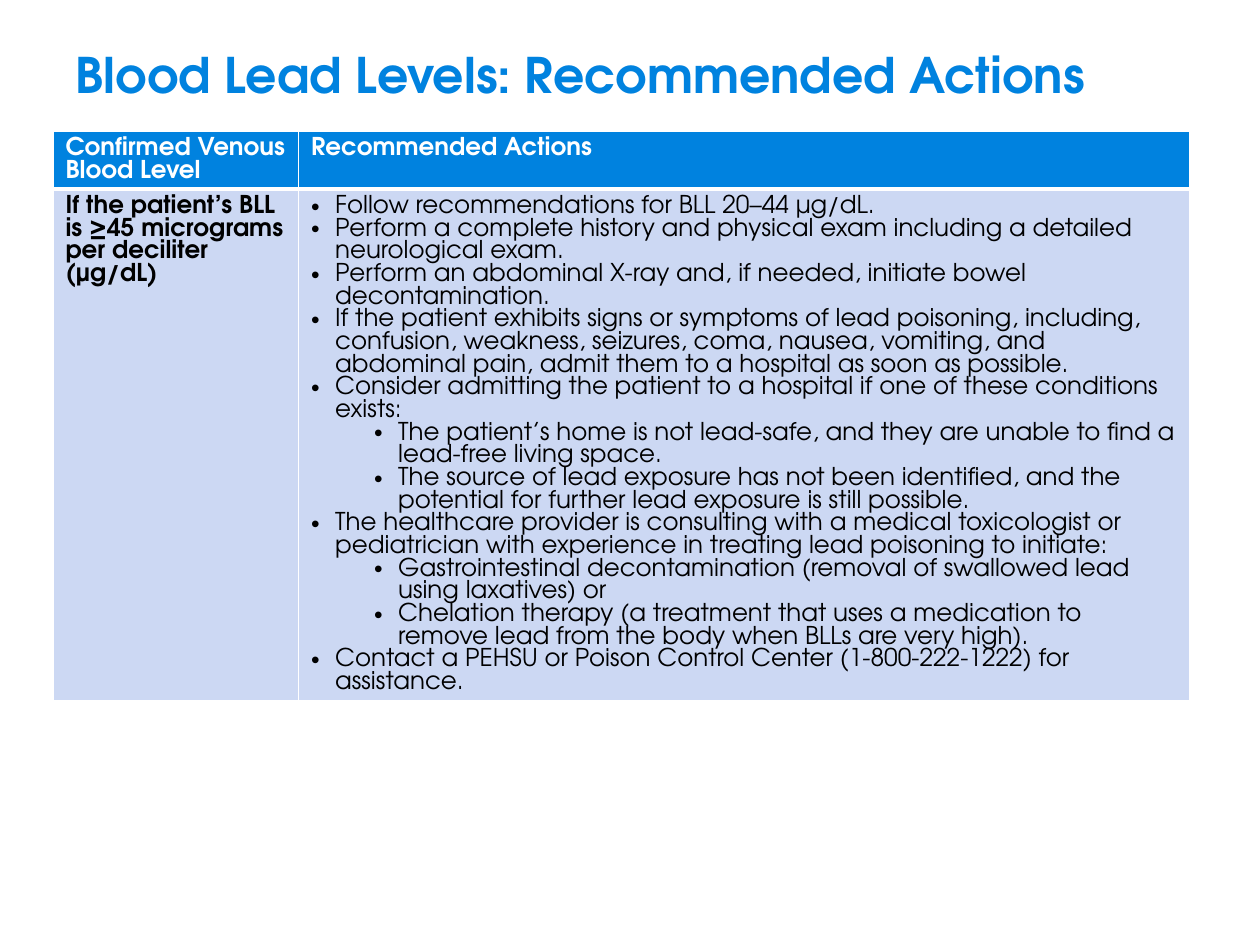
from lxml import etree
from pptx import Presentation
from pptx.dml.color import RGBColor
from pptx.enum.text import MSO_ANCHOR, MSO_AUTO_SIZE, PP_ALIGN
from pptx.oxml.ns import qn
from pptx.util import Inches, Pt

LEFT, MIDDLE, NO_FIT = PP_ALIGN.LEFT, MSO_ANCHOR.MIDDLE, MSO_AUTO_SIZE.NONE
TITLE_ONLY = 5
FONT = "TeX Gyre Adventor"
COLORS = {"blue": "0082DF", "pale": "CCD8F3", "white": "FFFFFF", "black": "000000"}

# Content
TITLE = "Blood Lead Levels: Recommended Actions"
HEADERS = ["Confirmed Venous Blood Level", "Recommended Actions"]
LEVEL = "If the patient’s BLL is ≥45 micrograms per deciliter (μg/dL)"
ACTIONS = [  # (action, conditions or treatments below it)
    ("Follow recommendations for BLL 20–44 μg/dL.", []),
    ("Perform a complete history and physical exam including a detailed neurological exam.", []),
    ("Perform an abdominal X-ray and, if needed, initiate bowel decontamination.", []),
    ("If the patient exhibits signs or symptoms of lead poisoning, including, confusion, "
     "weakness, seizures, coma, nausea, vomiting, and abdominal pain, admit them to a "
     "hospital as soon as possible.", []),
    ("Consider admitting the patient to a hospital if one of these conditions exists:", [
        "The patient’s home is not lead-safe, and they are unable to find a lead-free "
        "living space.",
        "The source of lead exposure has not been identified, and the potential for "
        "further lead exposure is still possible."]),
    ("The healthcare provider is consulting with a medical toxicologist or pediatrician "
     "with experience in treating lead poisoning to initiate:", [
         "Gastrointestinal decontamination (removal of swallowed lead using laxatives) or",
         "Chelation therapy (a treatment that uses a medication to remove lead from the "
         "body when BLLs are very high)."]),
    ("Contact a PEHSU or Poison Control Center (1-800-222-1222) for assistance.", []),
]
COLUMN_WIDTHS = [1.95, 7.07]
ROW_HEIGHT = 0.41
BULLET_INDENT, LEVEL_STEP = 0.19, 0.5


def write(para, text, size=14, color="black", bold=False):
    para.alignment = LEFT
    span = para.add_run()
    span.text = text
    span.font.name = FONT
    span.font.size = Pt(size)
    span.font.bold = bold
    span.font.color.rgb = RGBColor.from_string(COLORS[color])


def add_bullet(para, level):
    para.level = level
    properties = para._p.get_or_add_pPr()
    properties.set("marL", str(Inches(BULLET_INDENT + LEVEL_STEP * level)))
    properties.set("indent", str(-Inches(BULLET_INDENT)))
    etree.SubElement(properties, qn("a:buFont"), typeface="Arial")
    etree.SubElement(properties, qn("a:buChar"), char="•")


def style_cell(cell, fill, bottom=1):
    cell.fill.solid()
    cell.fill.fore_color.rgb = RGBColor.from_string(COLORS[fill])
    properties = cell._tc.get_or_add_tcPr()
    widths = {"L": 1, "R": 1, "T": 1, "B": bottom}
    for index, (side, width) in enumerate(widths.items()):
        line = etree.Element(qn(f"a:ln{side}"), w=str(Pt(width)))
        solid = etree.SubElement(line, qn("a:solidFill"))
        etree.SubElement(solid, qn("a:srgbClr"), val=COLORS["white"])
        properties.insert(index, line)


deck = Presentation()
deck.slide_width, deck.slide_height = Inches(10), Inches(7.5)
page = deck.slides.add_slide(deck.slide_layouts[TITLE_ONLY])

# Title
title = page.shapes.title
title.left, title.top, title.width, title.height = map(Inches, (0.5, 0.26, 9, 0.65))
title.text_frame.auto_size = NO_FIT
title.text_frame.vertical_anchor = MIDDLE
write(title.text_frame.paragraphs[0], TITLE, size=28, color="blue", bold=True)

# Table
table = page.shapes.add_table(2, 2, Inches(0.42), Inches(1.04),
                              Inches(sum(COLUMN_WIDTHS)), Inches(2 * ROW_HEIGHT)).table
for column, width in zip(table.columns, COLUMN_WIDTHS):
    column.width = Inches(width)

# Header row
for cell, header in zip(table.rows[0].cells, HEADERS):
    style_cell(cell, "blue", bottom=3)
    write(cell.text_frame.paragraphs[0], header, color="white", bold=True)

# Level and its actions
level_cell, action_cell = table.rows[1].cells
for cell in (level_cell, action_cell):
    style_cell(cell, "pale")
write(level_cell.text_frame.paragraphs[0], LEVEL, bold=True)

items = [(text, level) for action, details in ACTIONS
         for text, level in [(action, 0)] + [(detail, 1) for detail in details]]
frame = action_cell.text_frame
for index, (text, level) in enumerate(items):
    para = frame.add_paragraph() if index else frame.paragraphs[0]
    add_bullet(para, level)
    write(para, text)

deck.save("out.pptx")
